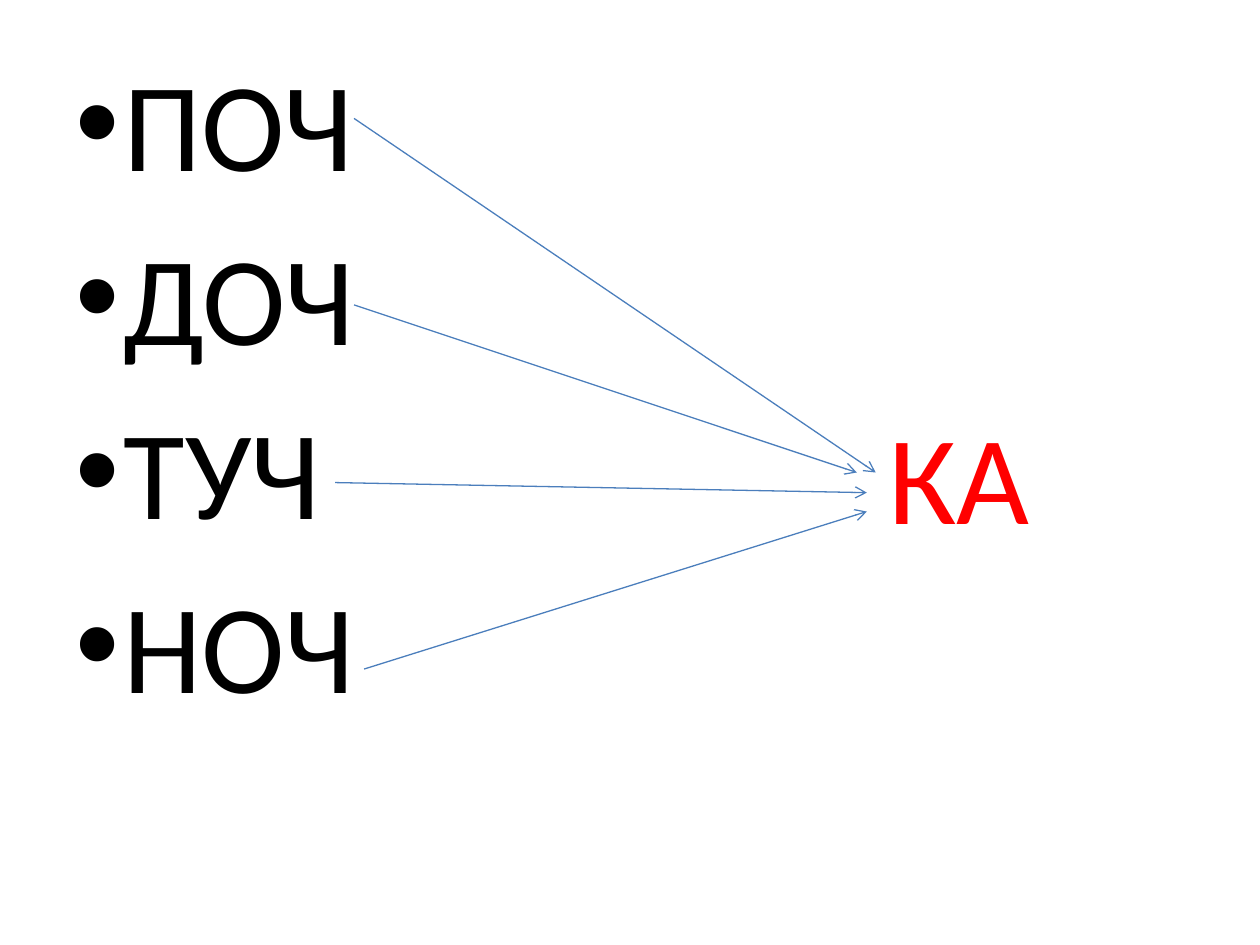
import pptx
import pptx.util
import pptx.dml.color
import pptx.enum.shapes
from lxml import etree

Inches, Pt = pptx.util.Inches, pptx.util.Pt
RGB = pptx.dml.color.RGBColor

# Content: word beginnings, their shared ending, arrows as (start, end)
STEMS = ["ПОЧ", "ДОЧ", "ТУЧ", "НОЧ"]
ENDING = "КА"
ENDING_ROW = 2
ARROWS = [
    ((2.81, 0.94), (6.95, 3.75)),
    ((2.81, 2.42), (6.8, 3.75)),
    ((2.66, 3.83), (6.88, 3.91)),
    ((2.89, 5.31), (6.88, 4.06)),
]

THEME = {
    "font": "Calibri", "size": 72, "space": 13,
    "stem": "000000", "ending": "FF0000",
    "line": "4B7EBC", "line_width": 0.75,
}
LEFT, TOP, INDENT = 0.5, 0.31, 0.38
ROW_PITCH = 1.4


def add_text(slide, lines, box, color, bullet=False):
    sp = slide.shapes.add_textbox(*(Inches(v) for v in box))
    tf = sp.text_frame
    tf.word_wrap = True
    for i, line in enumerate(lines):
        p = tf.paragraphs[0] if i == 0 else tf.add_paragraph()
        p.space_before = Pt(THEME["space"])
        r = p.add_run()
        r.text = line
        r.font.name = THEME["font"]
        r.font.size = Pt(THEME["size"])
        r.font.color.rgb = RGB.from_string(color)
        if bullet:
            pPr = p._p.get_or_add_pPr()
            pPr.set("marL", str(Inches(INDENT)))
            pPr.set("indent", str(-Inches(INDENT)))
            for tag, key, value in (("buFont", "typeface", "Arial"),
                                    ("buChar", "char", "•")):
                etree.SubElement(pPr, pptx.oxml.ns.qn("a:" + tag)).set(key, value)
    return sp


def add_arrow(slide, start, end):
    s = slide.shapes.add_connector(
        pptx.enum.shapes.MSO_CONNECTOR.STRAIGHT,
        *(Inches(v) for v in start + end))
    s.line.color.rgb = RGB.from_string(THEME["line"])
    s.line.width = Pt(THEME["line_width"])
    ln = s.line._get_or_add_ln()
    etree.SubElement(ln, pptx.oxml.ns.qn("a:tailEnd")).set("type", "arrow")
    etree.SubElement(s._element.spPr, pptx.oxml.ns.qn("a:effectLst"))


def main():
    prs = pptx.Presentation()
    prs.slide_width, prs.slide_height = Inches(10), Inches(7.5)
    slide = prs.slides.add_slide(prs.slide_layouts[6])

    # Bulleted beginnings, with the ending level with its row
    add_text(slide, STEMS, (LEFT, TOP, 6, 6.39), THEME["stem"], bullet=True)
    add_text(slide, [ENDING], (6.95, TOP + ENDING_ROW * ROW_PITCH, 2.55, 1.32),
             THEME["ending"])

    # Arrows from each beginning to the ending
    for start, end in ARROWS:
        add_arrow(slide, start, end)

    prs.save("out.pptx")


if __name__ == "__main__":
    main()
